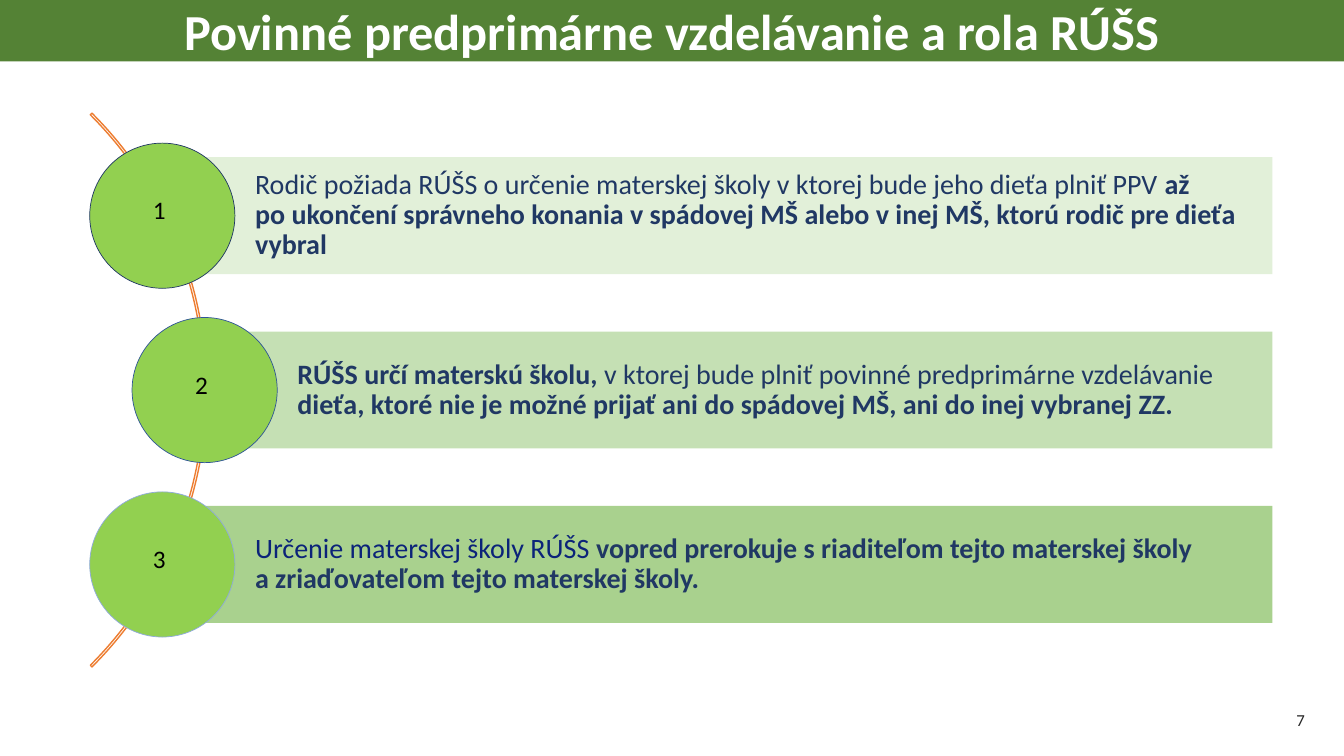
from pptx import Presentation
from pptx import util as u
from pptx.dml.color import RGBColor
from pptx.enum import shapes, text

THEME = {
    "font": "Calibri",
    "title": {"size": 36, "color": "FFFFFF", "band": "548235"},
    "body": {"size": 20, "color": "203864", "first": "0B2379"},
    "number": {"size": 18, "color": "000000"},
    "page": {"size": 12, "color": "262626"},
    "circle": "92D050",
    "arc": "ED7D31",
}
W, H = 13.33, 7.5
PITCH, MIDDLE = 1.73, 3.87  # row spacing and centre of the second row
CIRCLE, BAR, RIGHT = 1.44, 1.16, 12.62
ARC = 7.77


def write(tf, runs, size, align, margins):
    """Fill a text frame with (text, colour, bold) runs; "\\n" breaks the line."""
    tf.word_wrap = True
    tf.auto_size = text.MSO_AUTO_SIZE.NONE
    tf.vertical_anchor = text.MSO_ANCHOR.MIDDLE
    for side, margin in zip(("left", "top", "right", "bottom"), margins):
        setattr(tf, f"margin_{side}", u.Inches(margin))
    p = tf.paragraphs[0]
    p.alignment = align
    p.line_spacing = 0.9
    for content, color, bold in runs:
        for i, line in enumerate(content.split("\n")):
            if i:
                p.add_line_break()
            r = p.add_run()
            r.text = line
            fmt = {"name": THEME["font"], "size": u.Pt(size), "bold": bold}
            for key, value in fmt.items():
                setattr(r.font, key, value)
            r.font.color.rgb = RGBColor.from_string(color)


def add_shape(kind, left, top, width, height, fill=None, line=None, weight=1):
    sp = s.shapes.add_shape(kind, *map(u.Inches, (left, top, width, height)))
    sp.shadow.inherit = False
    if fill:
        sp.fill.solid()
        sp.fill.fore_color.rgb = RGBColor.from_string(fill)
    else:
        sp.fill.background()
    if line:
        sp.line.color.rgb = RGBColor.from_string(line)
        sp.line.width = u.Pt(weight)
    else:
        sp.line.fill.background()
    return sp


prs = Presentation()
prs.slide_width, prs.slide_height = u.Inches(W), u.Inches(H)
s = prs.slides.add_slide(prs.slide_layouts[5])
LEFT, CENTER, END = text.PP_ALIGN.LEFT, text.PP_ALIGN.CENTER, text.PP_ALIGN.RIGHT

# Title band
title = s.shapes.title
band = {"left": 0, "top": 0, "width": W, "height": 0.61}
for key, value in band.items():
    setattr(title, key, u.Inches(value))
title.fill.solid()
title.fill.fore_color.rgb = RGBColor.from_string(THEME["title"]["band"])
write(title.text_frame,
      [("Povinné predprimárne vzdelávanie a rola RÚŠS", THEME["title"]["color"], True)],
      THEME["title"]["size"], CENTER, (0.08, 0, 0.08, 0))
title.text_frame.paragraphs[0].line_spacing = 1.0

# Arc behind the rows
arc = add_shape(shapes.MSO_SHAPE.BLOCK_ARC, -5.72, MIDDLE - ARC / 2, ARC, ARC,
                line=THEME["arc"])
for i, value in enumerate((189, 27, 0.003)):
    arc.adjustments[i] = value

# Rows: circle centre, bar fill, circle outline, text
ink, first = THEME["body"]["color"], THEME["body"]["first"]
rows = [
    (1.61, "E2F0D9", "203864", [
        ("Rodič požiada RÚŠS o určenie materskej školy v ktorej bude jeho dieťa plniť PPV ",
         ink, False),
        ("až\npo ukončení správneho konania v spádovej MŠ alebo v inej MŠ, "
         "ktorú rodič pre dieťa vybral", ink, True)]),
    (2.03, "C5E0B4", "2F5597", [
        ("RÚŠS určí materskú školu, ", ink, True),
        ("v ktorej bude plniť povinné predprimárne vzdelávanie ", ink, False),
        ("dieťa, ktoré nie je možné prijať ani do spádovej MŠ, ani do inej vybranej ZZ.",
         ink, True)]),
    (1.61, "A9D18E", "8FAADC", [
        ("Určenie materskej školy RÚŠS ", first, False),
        ("vopred prerokuje s riaditeľom tejto materskej školy\n"
         "a zriaďovateľom tejto materskej školy.", ink, True)]),
]
for i, (x, fill, outline, runs) in enumerate(rows):
    y = MIDDLE + (i - 1) * PITCH
    bar = add_shape(shapes.MSO_SHAPE.RECTANGLE, x, y - BAR / 2, RIGHT - x, BAR, fill)
    write(bar.text_frame, runs, THEME["body"]["size"], LEFT, (0.92, 0.06, 0.06, 0.06))
    circle = add_shape(shapes.MSO_SHAPE.OVAL, x - CIRCLE / 2, y - CIRCLE / 2,
                       CIRCLE, CIRCLE, THEME["circle"], outline, 0.5)
    write(circle.text_frame, [(str(i + 1), THEME["number"]["color"], False)],
          THEME["number"]["size"], CENTER, (0, 0, 0.06, 0.08))

# Page number
page = s.shapes.add_textbox(*map(u.Inches, (10.04, 6.95, 3, 0.4)))
write(page.text_frame, [("7", THEME["page"]["color"], False)],
      THEME["page"]["size"], END, (0.1, 0.05, 0.1, 0.05))

prs.save("out.pptx")
